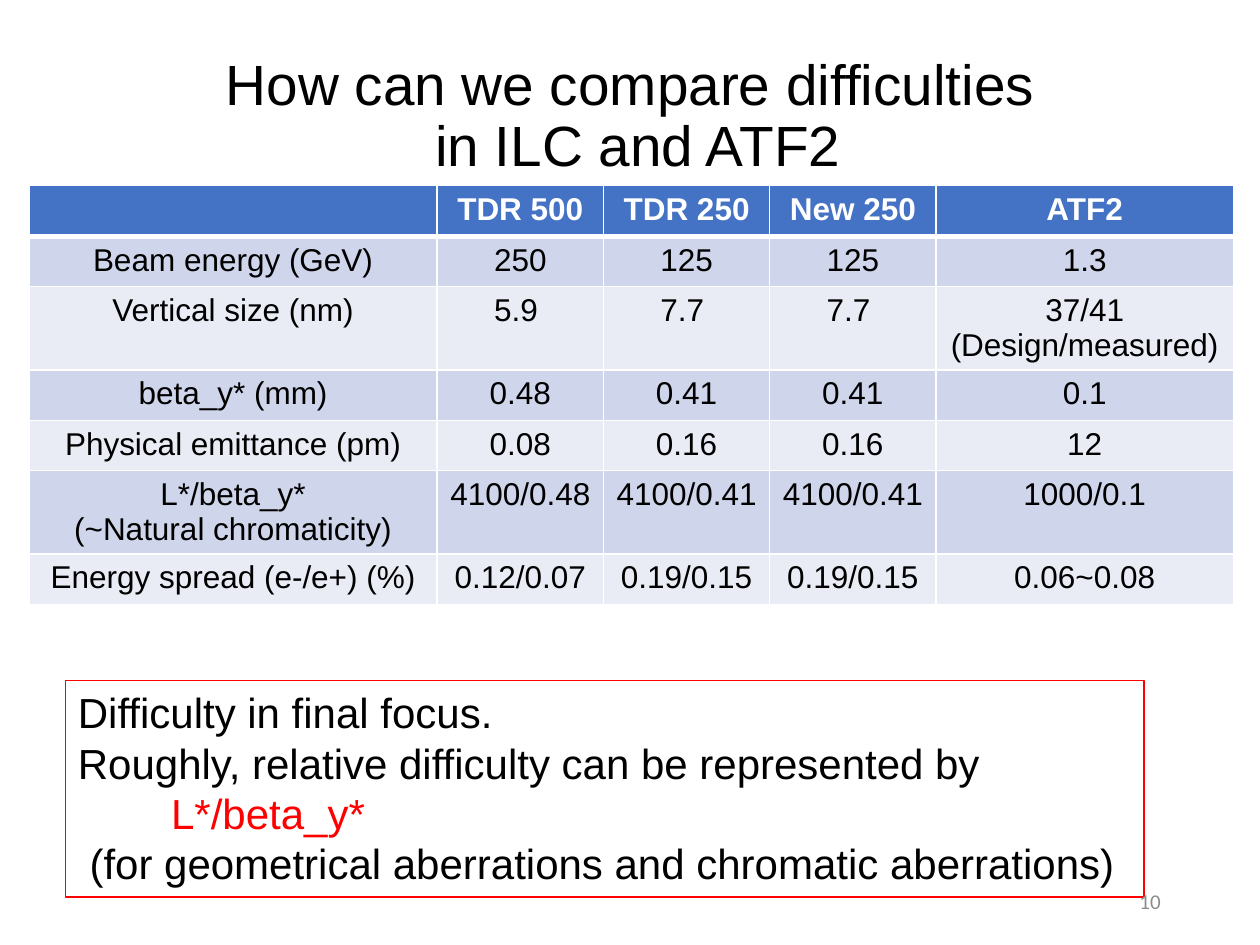
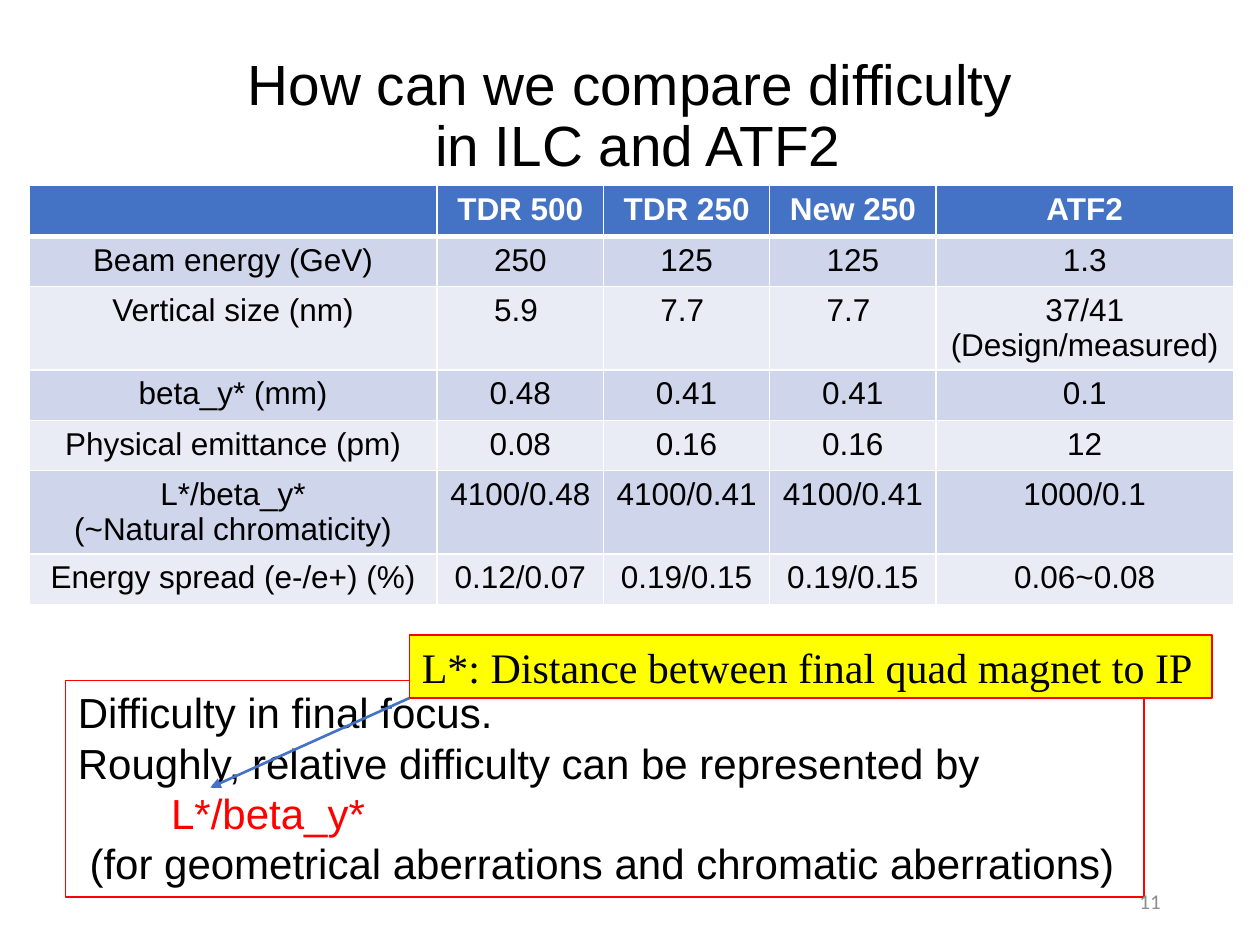
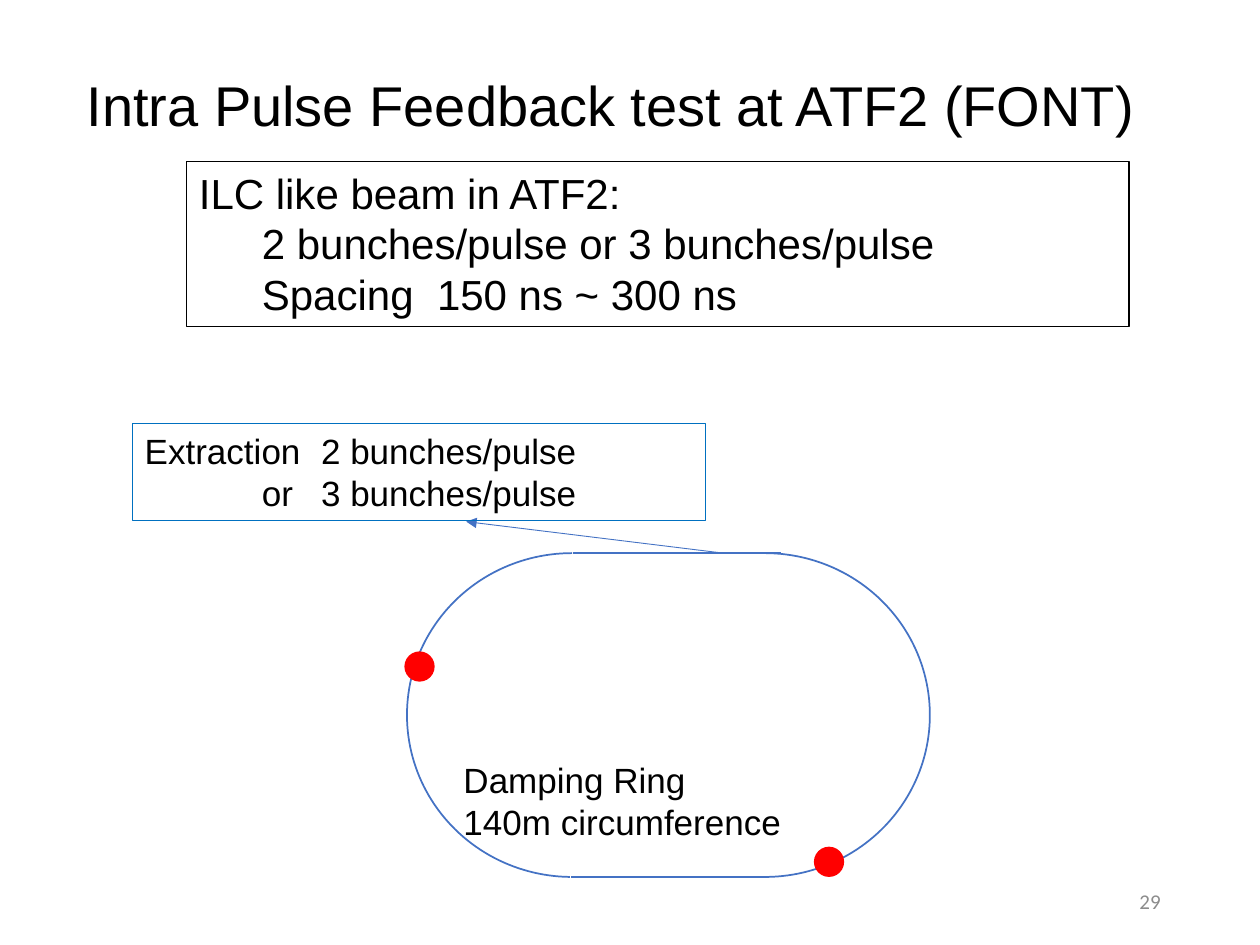
from lxml.etree import SubElement
from pptx import Presentation
from pptx.dml.color import RGBColor
from pptx.enum.shapes import MSO_CONNECTOR as Connector, MSO_SHAPE as Shape
from pptx.enum.text import MSO_ANCHOR as Anchor, MSO_AUTO_SIZE as AutoSize, PP_ALIGN as Align
from pptx.oxml.ns import qn
from pptx.util import Inches, Pt

BLACK, WHITE, RED, YELLOW = "000000", "FFFFFF", "FF0000", "FFFF00"
BLUE, EDGE_BLUE, GREY = "4472C4", "0070C0", "8C8C8C"
BANDS = ("CFD5EA", "E9EBF5")

COLUMN_WIDTHS = (3.24, 1.32, 1.32, 1.32, 2.36)
HEADER_HEIGHT, ROW_HEIGHT, TALL_ROW_HEIGHT = 0.38, 0.4, 0.66
PARAMETERS = (
    ("", "TDR 500", "TDR 250", "New 250", "ATF2"),
    ("Beam energy (GeV)", "250", "125", "125", "1.3"),
    ("Vertical size (nm)", "5.9 ", "7.7 ", "7.7 ", "37/41\n(Design/measured)"),
    ("beta_y* (mm)", "0.48", "0.41", "0.41", "0.1"),
    ("Physical emittance (pm)", "0.08", "0.16", "0.16", "12"),
    ("L*/beta_y*\n(~Natural chromaticity)", "4100/0.48", "4100/0.41", "4100/0.41", "1000/0.1"),
    ("Energy spread (e-/e+) (%)", "0.12/0.07", "0.19/0.15", "0.19/0.15", "0.06~0.08"),
)
DIFFICULTY = (
    "Difficulty in final focus.",
    "Roughly, relative difficulty can be represented by",
    ("\tL*/beta_y*", RED),
    " (for geometrical aberrations and chromatic aberrations)",
)


def rgb(value):
    """Turn a hex string into a colour."""
    return RGBColor.from_string(value)


def assign(target, values):
    """Set each attribute in a dict of format values."""
    for key, value in values.items():
        setattr(target, key, value)


def place(target, box):
    """Set the position and size of a placeholder in inches."""
    assign(target, dict(zip(("left", "top", "width", "height"), map(Inches, box))))


def style_font(font, size, color=BLACK, name="Arial", bold=False):
    """Format a font."""
    assign(font, {"size": Pt(size), "name": name, "bold": bold})
    font.color.rgb = rgb(color)


def outline(shape, color, width):
    """Give a shape or connector a solid line."""
    shape.line.color.rgb = rgb(color)
    shape.line.width = Pt(width)


def write(frame, lines, size, align=Align.LEFT, tabs=(), **font):
    """Write one paragraph per line; a line may be a pair of text and colour."""
    for index, line in enumerate(lines):
        text, color = (line, font.get("color", BLACK)) if isinstance(line, str) else line
        paragraph = frame.paragraphs[0] if index == 0 else frame.add_paragraph()
        paragraph.alignment = align
        run = paragraph.add_run()
        run.text = text
        style_font(run.font, size, **{**font, "color": color})
        if tabs:
            stops = SubElement(paragraph._p.get_or_add_pPr(), qn("a:tabLst"))
            for stop in tabs:
                SubElement(stops, qn("a:tab"), pos=str(Inches(stop)), algn="l")


def add_note(slide, box, lines, size, edge=None, fill=None, anchor=Anchor.TOP, wrap=True, **text):
    """Add a text box with an optional edge and fill."""
    note = slide.shapes.add_textbox(*map(Inches, box))
    assign(note.text_frame, {"word_wrap": wrap, "vertical_anchor": anchor})
    if edge:
        outline(note, edge, 0.75)
    if fill:
        note.fill.solid()
        note.fill.fore_color.rgb = rgb(fill)
    write(note.text_frame, lines, size, **text)


def add_titled_slide(deck, title, box, size):
    """Add a slide and format its title."""
    slide = deck.slides.add_slide(deck.slide_layouts[5])
    heading = slide.shapes.title
    place(heading, box)
    frame = heading.text_frame
    assign(frame, {"auto_size": AutoSize.NONE, "word_wrap": True,
                   "vertical_anchor": Anchor.MIDDLE, "text": title})
    paragraph = frame.paragraphs[0]
    assign(paragraph, {"alignment": Align.CENTER, "line_spacing": 0.9})
    for run in paragraph.runs:
        style_font(run.font, size)
    return slide


def add_page_number(slide, number):
    """Add the page number at the lower right."""
    add_note(slide, (7.06, 6.95, 2.25, 0.4), [str(number)], 12, anchor=Anchor.MIDDLE,
             align=Align.RIGHT, color=GREY, name="Calibri")


def add_segment(shapes, start, end, width, arrow=False):
    """Add a blue line, with an arrowhead at its end if asked."""
    segment = shapes.add_connector(Connector.STRAIGHT, *map(Inches, start + end))
    outline(segment, BLUE, width)
    if arrow:
        SubElement(segment.line._get_or_add_ln(), qn("a:tailEnd"), type="triangle")
    SubElement(segment._element.spPr, qn("a:effectLst"))


def border_cell(cell, bottom_width):
    """Draw white borders around a cell."""
    properties = cell._tc.get_or_add_tcPr()
    for side, width in (("L", 1), ("R", 1), ("T", 1), ("B", bottom_width)):
        border = SubElement(properties, qn(f"a:ln{side}"), w=str(Pt(width)))
        paint = SubElement(border, qn("a:solidFill"))
        SubElement(paint, qn("a:srgbClr"), val=WHITE)


def add_parameter_table(slide):
    """Add the table of beam parameters."""
    heights = [HEADER_HEIGHT] + [
        TALL_ROW_HEIGHT if any("\n" in value for value in row) else ROW_HEIGHT
        for row in PARAMETERS[1:]]
    box = (0.23, 1.47, sum(COLUMN_WIDTHS), sum(heights))
    table = slide.shapes.add_table(len(PARAMETERS), len(COLUMN_WIDTHS), *map(Inches, box)).table
    for column, width in zip(table.columns, COLUMN_WIDTHS):
        column.width = Inches(width)
    for index, (values, height) in enumerate(zip(PARAMETERS, heights)):
        header = index == 0
        table.rows[index].height = Inches(height)
        for cell, value in zip(table.rows[index].cells, values):
            border_cell(cell, 3 if header else 1)
            cell.fill.solid()
            cell.fill.fore_color.rgb = rgb(BLUE if header else BANDS[(index - 1) % 2])
            if value:
                write(cell.text_frame, value.split("\n"), 18, Align.CENTER,
                      color=WHITE if header else BLACK, bold=header)


def add_comparison_slide(deck, topic):
    """Add a slide comparing the machines, with the difficulty note."""
    slide = add_titled_slide(deck, f"How can we compare {topic}\v in ILC and ATF2",
                             (0.69, 0.4, 8.62, 1.07), 32.4)
    add_parameter_table(slide)
    add_note(slide, (0.52, 5.4, 8.56, 1.72), DIFFICULTY, 24, edge=RED, tabs=(0.74,))
    return slide


def add_ring(slide):
    """Add the damping ring from two arcs and two straight sections."""
    ring = slide.shapes.add_group_shape().shapes
    for left, flipped in ((4.76, False), (3.23, True)):
        arc = ring.add_shape(Shape.ARC, *map(Inches, (left, 4.39, 2.62, 2.57)))
        arc.adjustments[0], arc.adjustments[1] = 162, 53.55
        arc.shadow.inherit = False
        arc.fill.background()
        outline(arc, BLUE, 1)
        if flipped:
            arc._element.spPr.xfrm.set("flipH", "1")
    add_segment(ring, (4.55, 4.39), (6.2, 4.39), 1)
    add_segment(ring, (4.53, 6.96), (6.09, 6.96), 1)


def add_bunch(slide, left, top):
    """Add a red dot for a bunch in the ring."""
    bunch = slide.shapes.add_shape(Shape.OVAL, *map(Inches, (left, top, 0.24, 0.24)))
    bunch.shadow.inherit = False
    bunch.fill.solid()
    bunch.fill.fore_color.rgb = rgb(RED)
    bunch.line.fill.background()


def add_feedback_slide(deck):
    """Add the slide on the feedback test."""
    slide = add_titled_slide(deck, "Intra Pulse Feedback test at ATF2 (FONT)",
                             (0.38, 0.38, 8.94, 0.96), 32)
    add_note(slide, (1.48, 1.28, 7.48, 1.31),
             ["ILC like beam in ATF2:", "\t2 bunches/pulse or 3 bunches/pulse",
              "\tSpacing\t150 ns ~ 300 ns"], 24, edge=BLACK, tabs=(0.5, 1.89))
    add_ring(slide)
    add_segment(slide.shapes, (5.74, 4.39), (3.7, 4.14), 0.5, arrow=True)
    for left, top in ((3.21, 5.17), (6.46, 6.72)):
        add_bunch(slide, left, top)
    add_note(slide, (1.05, 3.36, 4.55, 0.77),
             ["Extraction\t2 bunches/pulse", "\tor\t3 bunches/pulse"], 20,
             edge=EDGE_BLUE, tabs=(0.93, 1.4))
    add_note(slide, (3.58, 5.97, 2.95, 0.77), ["Damping Ring", "140m circumference"], 20)
    return slide


def main():
    """Build the deck."""
    deck = Presentation()
    assign(deck, {"slide_width": Inches(10), "slide_height": Inches(7.5)})
    add_page_number(add_comparison_slide(deck, "difficulties"), 10)
    explained = add_comparison_slide(deck, "difficulty")
    add_note(explained, (3.25, 5.04, 6.37, 0.5), ["L*: Distance between final quad magnet to IP"],
             24, edge=RED, fill=YELLOW, wrap=False, name="Times New Roman")
    add_segment(explained.shapes, (3.25, 5.54), (1.67, 6.25), 1.5, arrow=True)
    add_page_number(explained, 11)
    add_page_number(add_feedback_slide(deck), 29)
    deck.save("out.pptx")


if __name__ == "__main__":
    main()
